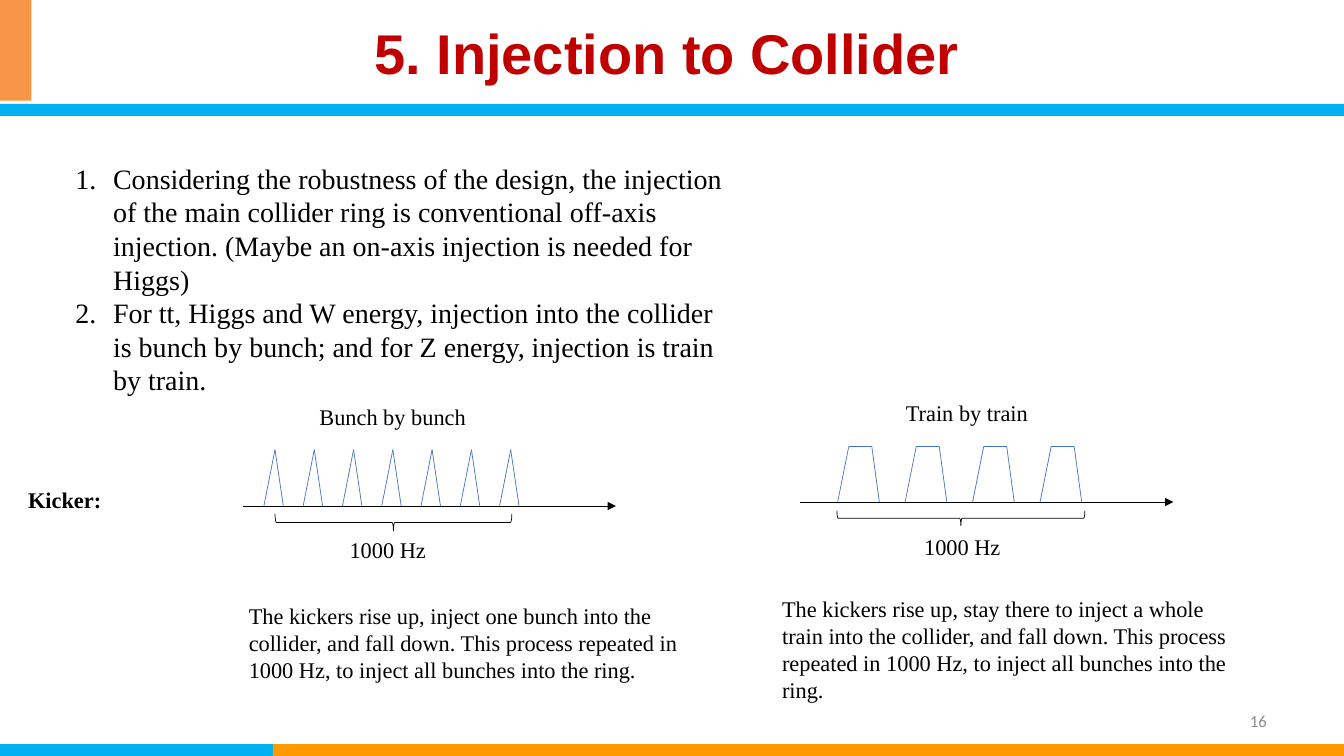
from itertools import pairwise

from lxml.etree import SubElement
from pptx import Presentation
from pptx.dml.color import RGBColor
from pptx.enum.shapes import MSO_CONNECTOR, MSO_SHAPE
from pptx.enum.text import MSO_ANCHOR, MSO_AUTO_SIZE, PP_ALIGN
from pptx.oxml.ns import qn
from pptx.util import Cm, Pt

SERIF = "Times New Roman"
BLACK, PULSE_BLUE = "000000", "4472C4"
SKY, ORANGE, PEACH = "00B0F0", "FF9900", "F79646"


def colour(hex_code):
    return RGBColor.from_string(hex_code)


def format_font(para, size, name=SERIF, hex_code=BLACK, bold=False):
    font = para.font
    font.name, font.size, font.bold = name, Pt(size), bold
    font.color.rgb = colour(hex_code)


def number_paragraph(para):
    properties = para._p.get_or_add_pPr()
    properties.set("marL", str(Cm(0.95)))
    properties.set("indent", str(-Cm(0.95)))
    SubElement(properties, qn("a:buFont"), typeface="+mj-lt")
    SubElement(properties, qn("a:buAutoNum"), type="arabicPeriod")


def add_text(page, left, top, width, height, lines, size=16, numbered=False,
             align=PP_ALIGN.LEFT, **font):
    box = page.shapes.add_textbox(Cm(left), Cm(top), Cm(width), Cm(height))
    frame = box.text_frame
    frame.word_wrap = True
    frame.auto_size = MSO_AUTO_SIZE.SHAPE_TO_FIT_TEXT
    frame.text = "\n".join(lines)
    for para in frame.paragraphs:
        para.alignment = align
        if numbered:
            number_paragraph(para)
        format_font(para, size, **font)
    return box


def add_bar(page, left, top, width, height, hex_code):
    bar = page.shapes.add_shape(
        MSO_SHAPE.RECTANGLE, Cm(left), Cm(top), Cm(width), Cm(height))
    bar.shadow.inherit = False
    bar.fill.solid()
    bar.fill.fore_color.rgb = colour(hex_code)
    bar.line.fill.background()


def add_line(shapes, start, end, hex_code, arrow=False):
    line = shapes.add_connector(
        MSO_CONNECTOR.STRAIGHT, *map(Cm, start), *map(Cm, end))
    line.line.color.rgb = colour(hex_code)
    line.line.width = Pt(0.5)
    if arrow:
        SubElement(line.line._get_or_add_ln(), qn("a:tailEnd"), type="triangle")
    SubElement(line._element.spPr, qn("a:effectLst"))


def add_pulse(page, left, base, profile):
    group = page.shapes.add_group_shape()
    points = [(left + across, base - up) for across, up in profile]
    for start, end in pairwise(points):
        add_line(group.shapes, start, end, PULSE_BLUE)


def add_brace(page, left, top, width, height):
    # A right brace turned a quarter, so its frame swaps width and height
    brace = page.shapes.add_shape(
        MSO_SHAPE.RIGHT_BRACE,
        Cm(left + (width - height) / 2), Cm(top + (height - width) / 2),
        Cm(height), Cm(width))
    brace.rotation = 90
    brace.shadow.inherit = False
    brace.fill.background()
    brace.line.color.rgb = colour(BLACK)
    brace.line.width = Pt(0.5)


def add_pulse_train(page, axis_left, base, first, step, count, profile):
    add_line(page.shapes, (axis_left, base), (axis_left + 9.4, base), BLACK, True)
    for index in range(count):
        add_pulse(page, first + index * step, base, profile)


def add_title(page, text):
    title = page.shapes.title
    title.left, title.top, title.width, title.height = map(
        Cm, (1.85, 0.41, 29.9, 2.01))
    frame = title.text_frame
    frame.text = text
    frame.vertical_anchor = MSO_ANCHOR.MIDDLE
    para = frame.paragraphs[0]
    para.alignment = PP_ALIGN.CENTER
    para.line_spacing = 0.9
    format_font(para, 40, "Arial", "C00000", True)


def main():
    deck = Presentation()
    deck.slide_width, deck.slide_height = Cm(33.87), Cm(19.05)
    page = deck.slides.add_slide(deck.slide_layouts[5])

    # Frame bars and title
    add_bar(page, 0, 18.75, 33.87, 0.3, SKY)
    add_bar(page, 6.88, 18.75, 26.99, 0.3, ORANGE)
    add_bar(page, 0, 2.62, 33.87, 0.3, SKY)
    add_bar(page, 0, 0, 0.79, 2.54, PEACH)
    add_title(page, "5. Injection to Collider")

    # Numbered points
    add_text(page, 1.65, 3.94, 16.89, 6.25, [
        "Considering the robustness of the design, the injection of the main "
        "collider ring is conventional off-axis injection. (Maybe an on-axis "
        "injection is needed for Higgs)",
        "For tt, Higgs and W energy, injection into the collider is bunch by "
        "bunch; and for Z energy, injection is train by train.",
    ], size=20, numbered=True)
    add_text(page, 0.46, 12.12, 5.03, 0.94, ["Kicker:"], bold=True)

    # Bunch by bunch
    spike = [(0, 0), (0.28, 1.42), (0.49, 0)]
    add_text(page, 7.8, 10.03, 5.03, 0.94, ["Bunch by bunch"])
    add_pulse_train(page, 6.12, 12.75, 6.65, 0.99, 7, spike)
    add_brace(page, 6.93, 12.95, 5.97, 0.43)
    add_text(page, 8.56, 13.39, 3.56, 0.94, ["1000 Hz"])
    add_text(page, 6.02, 15.06, 11.94, 2.31, [
        "The kickers rise up, inject one bunch into the collider, and fall "
        "down. This process repeated in 1000 Hz, to inject all bunches into "
        "the ring."])

    # Train by train
    plateau = [(0, 0), (0.28, 1.4), (0.86, 1.4), (1.05, 0)]
    add_text(page, 22.58, 9.93, 5.03, 0.94, ["Train by train"])
    add_pulse_train(page, 20.17, 12.65, 21.11, 1.7, 4, plateau)
    add_brace(page, 21.09, 12.87, 6.25, 0.38)
    add_text(page, 23.04, 13.31, 3.56, 0.94, ["1000 Hz"])
    add_text(page, 19.46, 14.88, 11.94, 3, [
        "The kickers rise up, stay there to inject a whole train into the "
        "collider, and fall down. This process repeated in 1000 Hz, to inject "
        "all bunches into the ring."])

    # Page number
    number = add_text(page, 24.28, 17.65, 7.9, 1.02, ["16"], size=12,
                      align=PP_ALIGN.RIGHT, name="Calibri", hex_code="8C8C8C")
    number.text_frame.auto_size = MSO_AUTO_SIZE.NONE
    number.text_frame.vertical_anchor = MSO_ANCHOR.MIDDLE

    deck.save("out.pptx")


if __name__ == "__main__":
    main()
